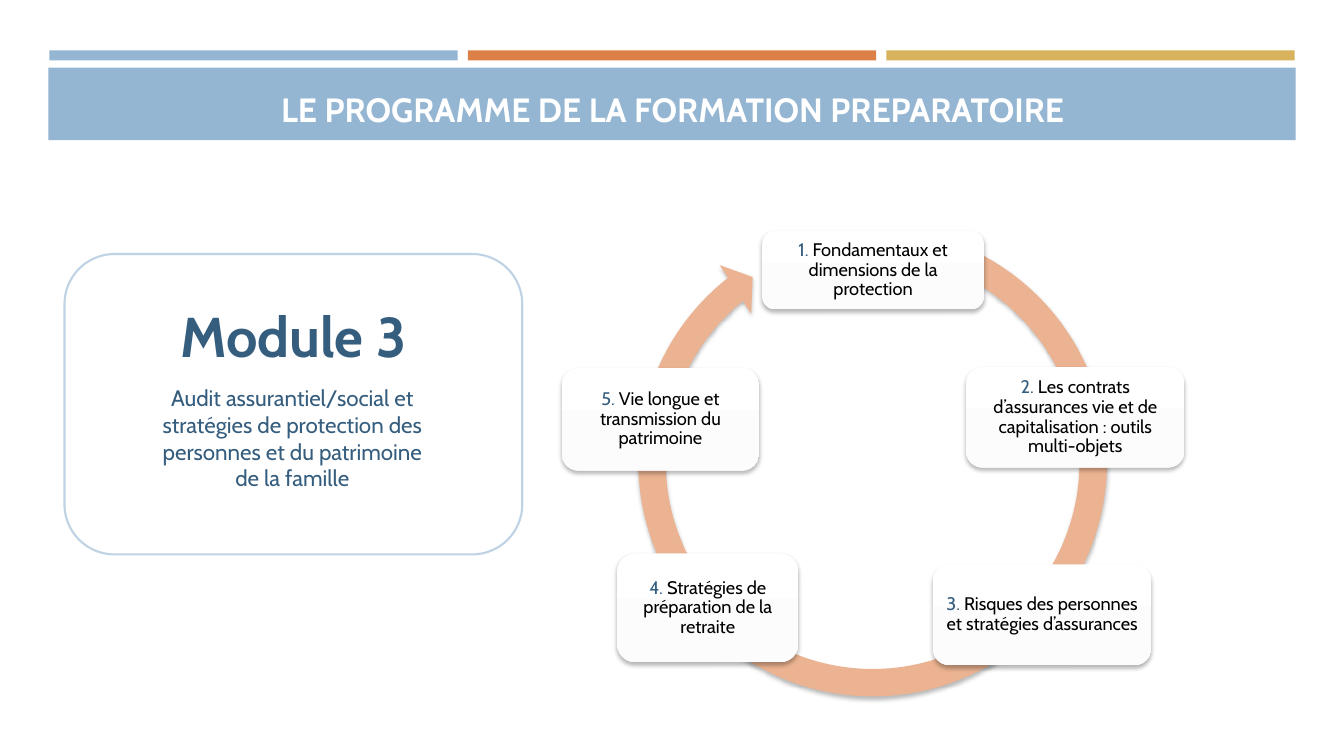
"""Build the slide presenting module 3 of the preparatory training programme."""
from copy import deepcopy

from lxml.etree import SubElement
from pptx import Presentation
from pptx.dml.color import RGBColor
from pptx.enum.shapes import MSO_SHAPE as Shape
from pptx.enum.text import MSO_ANCHOR as Anchor, PP_ALIGN as Align
from pptx.oxml.ns import qn
from pptx.util import Inches, Pt

BLUE = RGBColor(0x94, 0xB6, 0xD2)
ORANGE = RGBColor(0xDD, 0x80, 0x47)
GOLD = RGBColor(0xD8, 0xB2, 0x5C)
PEACH = RGBColor(0xEB, 0xB3, 0x91)
PALE_BLUE = RGBColor(0xBF, 0xD3, 0xE4)
DARK_BLUE = RGBColor(0x35, 0x5D, 0x7E)
OFF_WHITE = RGBColor(0xFC, 0xFC, 0xFC)
WHITE = RGBColor(0xFF, 0xFF, 0xFF)
BLACK = RGBColor(0, 0, 0)

presentation = Presentation()
presentation.slide_width = Inches(13.33)
presentation.slide_height = Inches(7.5)
slide = presentation.slides.add_slide(presentation.slide_layouts[6])


def add_block(kind, left, top, width, height, fill=None, shadow=False):
    """Add a preset shape without outline, with an optional soft shadow."""
    shape = slide.shapes.add_shape(kind, Inches(left), Inches(top), Inches(width), Inches(height))
    if fill is not None:
        shape.fill.solid()
        shape.fill.fore_color.rgb = fill
    shape.line.fill.background()
    shape.shadow.inherit = False
    if shadow:
        effects = shape._element.spPr.find(qn("a:effectLst"))
        outer = SubElement(effects, qn("a:outerShdw"), blurRad=str(Pt(3)), dist=str(Pt(2)),
                           dir="5400000", rotWithShape="0")
        color = SubElement(outer, qn("a:srgbClr"), val="000000")
        SubElement(color, qn("a:alpha"), val="28000")
    return shape


def write(shape, runs, size, anchor, bold=False):
    """Write one centred paragraph made of (text, colour) runs."""
    frame = shape.text_frame
    frame.word_wrap = True
    frame.vertical_anchor = anchor
    paragraph = frame.paragraphs[0]
    paragraph.alignment = Align.CENTER
    for text, color in runs:
        run = paragraph.add_run()
        run.text = text
        run.font.name = "Cabin"
        run.font.size = Pt(size)
        run.font.bold = bold
        run.font.color.rgb = color
    return frame


for index, color in enumerate([BLUE, ORANGE, GOLD]):
    add_block(Shape.RECTANGLE, 0.49 + 4.15 * index, 0.5, 4.05, 0.1, color)
add_block(Shape.RECTANGLE, 0.48, 0.67, 12.37, 0.72, BLUE)

cycle = add_block(Shape.CIRCULAR_ARROW, 6.18, 2.11, 4.95, 4.95, PEACH, shadow=True)
for index, value in enumerate([0.055, 3.307, 138.929, 173.152, 0.058]):
    cycle.adjustments[index] = value

steps = [
    (7.56, 2.29, 2.2, 0.78, "Fondamentaux et dimensions de la protection"),
    (9.58, 3.64, 2.17, 1, "Les contrats d’assurances vie et de capitalisation : outils multi-objets"),
    (9.25, 5.6, 2.17, 1, "Risques des personnes et stratégies d’assurances"),
    (6.12, 5.49, 1.8, 1.08, "Stratégies de préparation de la retraite"),
    (5.57, 3.65, 1.96, 1.02, "Vie longue et transmission du patrimoine"),
]
for number, (left, top, width, height, label) in enumerate(steps, 1):
    step = add_block(Shape.ROUNDED_RECTANGLE, left, top, width, height, shadow=True)
    step.fill.gradient()
    step.fill.gradient_angle = 270
    stop_list = step._element.spPr.find(qn("a:gradFill")).find(qn("a:gsLst"))
    stop_list.append(deepcopy(stop_list[0]))
    for stop, position, color in zip(step.fill.gradient_stops, [0, 0.41, 1],
                                     [WHITE, OFF_WHITE, WHITE]):
        stop.position = position
        stop.color.rgb = color
    frame = write(step, [(f"{number}. ", DARK_BLUE), (label, BLACK)], 13, Anchor.MIDDLE)
    frame.margin_left = frame.margin_right = Inches(0.05)
    frame.margin_top = frame.margin_bottom = Inches(0.05)
    frame.paragraphs[0].line_spacing = 0.9

module = add_block(Shape.ROUNDED_RECTANGLE, 0.64, 2.52, 4.54, 2.98, WHITE)
module.line.color.rgb = PALE_BLUE
module.line.width = Pt(1.5)
frame = write(module, [("Module 3", DARK_BLUE)], 40, Anchor.TOP, bold=True)
frame.margin_top = Inches(0.33)

summary = slide.shapes.add_textbox(Inches(1.51), Inches(3.76), Inches(2.78), Inches(1.18))
write(summary, [("Audit assurantiel/social et stratégies de protection des personnes "
                 "et du patrimoine de la famille", DARK_BLUE)], 16, Anchor.TOP)

title = slide.shapes.add_textbox(Inches(0.64), Inches(0.77), Inches(12.06), Inches(0.56))
write(title, [("LE PROGRAMME DE LA FORMATION PREPARATOIRE", WHITE)], 24, Anchor.BOTTOM, bold=True)

presentation.save("out.pptx")
